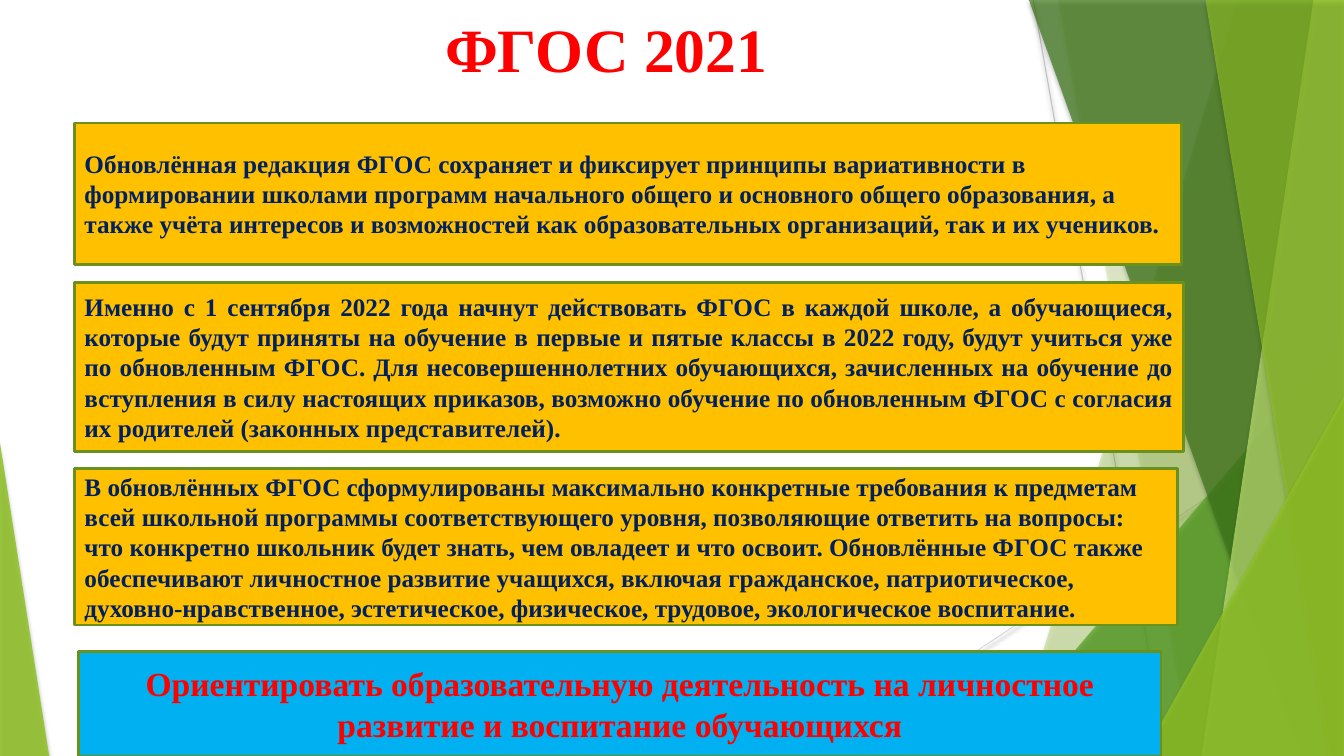
"""Build the slide about the 2021 school standards."""
from lxml import etree
from pptx import Presentation
from pptx.dml.color import RGBColor
from pptx.enum import shapes, text
from pptx.oxml import ns
from pptx.util import Cm, Pt

WIDE, HIGH = 33.87, 19.05
FONT = "Times New Roman"
RED = RGBColor(0xFF, 0x00, 0x00)
NAVY = RGBColor(0x00, 0x20, 0x60)
AMBER = RGBColor(0xFF, 0xC0, 0x00)
BLUE = RGBColor(0x00, 0xB0, 0xF0)
EDGE = RGBColor(0x6B, 0x90, 0x1C)
LIME = RGBColor(0x90, 0xC2, 0x26)
PALE = RGBColor(0xC0, 0xE4, 0x74)
GREEN = RGBColor(0x54, 0xA0, 0x21)
DARK = RGBColor(0x3F, 0x78, 0x19)
GREY = RGBColor(0xBF, 0xBF, 0xBF)
LIGHT = RGBColor(0xD9, 0xD9, 0xD9)

BOXES = [
    (1.88, 3.1, 27.89, 3.56, text.PP_ALIGN.LEFT,
     "Обновлённая редакция ФГОС сохраняет и фиксирует принципы вариативности "
     "в формировании школами программ начального общего и основного общего "
     "образования, а также учёта интересов и возможностей как образовательных "
     "организаций, так и их учеников."),
    (1.88, 7.11, 27.94, 4.27, text.PP_ALIGN.JUSTIFY,
     "Именно с 1 сентября 2022 года начнут действовать ФГОС в каждой школе, "
     "а обучающиеся, которые будут приняты на обучение в первые и пятые классы "
     "в 2022 году, будут учиться уже по обновленным ФГОС. Для "
     "несовершеннолетних обучающихся, зачисленных на обучение до вступления "
     "в силу настоящих приказов, возможно обучение по обновленным ФГОС "
     "с согласия их родителей (законных представителей)."),
    (1.88, 11.81, 27.79, 3.94, text.PP_ALIGN.LEFT,
     "В обновлённых ФГОС сформулированы максимально конкретные требования "
     "к предметам всей школьной программы соответствующего уровня, "
     "позволяющие ответить на вопросы: что конкретно школьник будет знать, "
     "чем овладеет и что освоит. Обновлённые ФГОС также обеспечивают "
     "личностное развитие учащихся, включая гражданское, патриотическое, "
     "духовно-нравственное, эстетическое, физическое, трудовое, "
     "экологическое воспитание."),
]
GOAL = ("Ориентировать образовательную деятельность на личностное развитие "
        "и воспитание обучающихся")


def shade(shape, alpha):
    """Give a shape a soft shadow that falls straight down."""
    props = shape._element.spPr
    for old in props.findall(ns.qn("a:effectLst")):
        props.remove(old)
    effects = etree.SubElement(props, ns.qn("a:effectLst"))
    outer = etree.SubElement(effects, ns.qn("a:outerShdw"), blurRad="38100",
                             dist="25400", dir="5400000", rotWithShape="0")
    tone = etree.SubElement(outer, ns.qn("a:srgbClr"), val="000000")
    etree.SubElement(tone, ns.qn("a:alpha"), val=str(alpha * 1000))


def tint(shape, color, alpha):
    """Fill a shape with a see-through colour and no outline."""
    shape.fill.solid()
    shape.fill.fore_color.rgb = color
    shape.line.fill.background()
    tone = shape._element.spPr.find(ns.qn("a:solidFill"))[0]
    etree.SubElement(tone, ns.qn("a:alpha"), val=str(alpha * 1000))
    shade(shape, 35)


def ray(slide, start, end, color):
    """Draw a thin line across the backdrop."""
    line = slide.shapes.add_connector(
        shapes.MSO_CONNECTOR.STRAIGHT, *map(Cm, start + end))
    line.line.color.rgb = color
    line.line.width = Pt(0.75)
    shade(line, 38)


def facet(slide, top, base, color, alpha):
    """Draw a full-height panel from a slanted left edge to the right side."""
    pen = slide.shapes.build_freeform(Cm(top), 0)
    pen.add_line_segments([(Cm(WIDE), 0), (Cm(WIDE), Cm(HIGH)),
                           (Cm(base), Cm(HIGH))])
    tint(pen.convert_to_shape(), color, alpha)


def wedge(slide, left, top, width, tip, color, alpha):
    """Draw a triangle that stands on the bottom of the slide."""
    shape = slide.shapes.add_shape(
        shapes.MSO_SHAPE.ISOSCELES_TRIANGLE,
        Cm(left), Cm(top), Cm(width), Cm(HIGH - top))
    shape.adjustments[0] = tip
    tint(shape, color, alpha)


def write(shape, words, size, color, align):
    """Put one bold paragraph in the middle of a shape."""
    frame = shape.text_frame
    frame.word_wrap = True
    frame.vertical_anchor = text.MSO_ANCHOR.MIDDLE
    par = frame.paragraphs[0]
    par.text = words
    par.alignment = align
    par.font.name = FONT
    par.font.size = Pt(size)
    par.font.bold = True
    par.font.color.rgb = color


def box(slide, left, top, width, height, fill):
    """Add an outlined rectangle."""
    shape = slide.shapes.add_shape(
        shapes.MSO_SHAPE.RECTANGLE, *map(Cm, (left, top, width, height)))
    shape.shadow.inherit = False
    shape.fill.solid()
    shape.fill.fore_color.rgb = fill
    shape.line.color.rgb = EDGE
    shape.line.width = Pt(2)
    return shape


def scene(slide):
    """Draw the green backdrop from back to front."""
    ray(slide, (26.04, 0), (29.41, HIGH), GREY)
    ray(slide, (WIDE, 10.24), (20.64, HIGH), LIGHT)
    facet(slide, 31.19, 25.5, LIME, 30)
    facet(slide, 26.67, 30.02, LIME, 20)
    wedge(slide, 24.82, 8.46, 9.05, 1, GREEN, 72)
    facet(slide, 25.93, 32.79, DARK, 70)
    facet(slide, 33.1, 30.28, PALE, 70)
    facet(slide, 30.38, 33.48, LIME, 65)
    wedge(slide, 28.8, 9.98, 5.07, 1, LIME, 80)
    wedge(slide, 0, 11.15, 1.24, 0, LIME, 85)


def main():
    """Build and save the slide."""
    deck = Presentation()
    deck.slide_width, deck.slide_height = Cm(WIDE), Cm(HIGH)
    slide = deck.slides.add_slide(deck.slide_layouts[6])
    scene(slide)
    title = slide.shapes.add_textbox(Cm(4.8), Cm(0), Cm(20.96), Cm(2.41))
    write(title, "ФГОС 2021", 44, RED, text.PP_ALIGN.CENTER)
    for left, top, width, height, align, words in BOXES:
        panel = box(slide, left, top, width, height, AMBER)
        write(panel, words, 18, NAVY, align)
    goal = box(slide, 1.98, 16.41, 27.28, 2.64, BLUE)
    write(goal, GOAL, 24, RED, text.PP_ALIGN.CENTER)
    deck.save("out.pptx")


if __name__ == "__main__":
    main()
